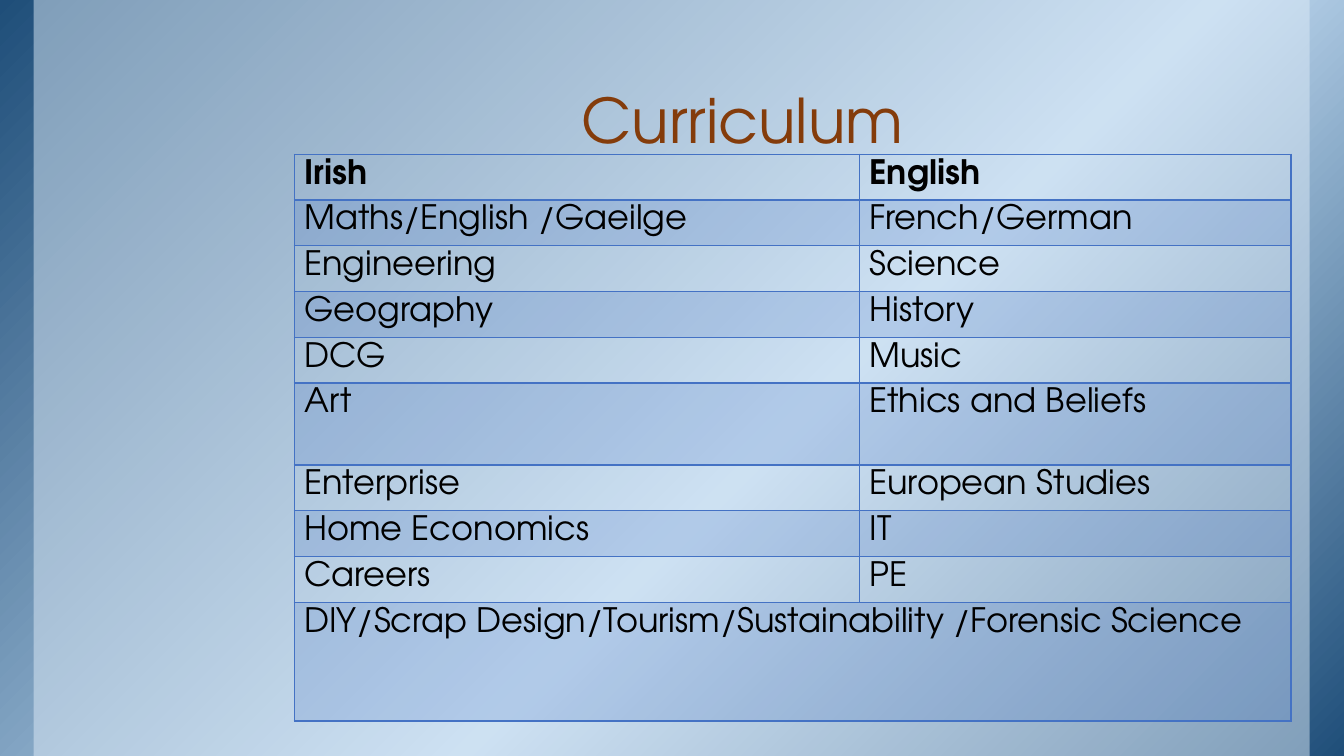
from lxml import etree
from pptx import Presentation
from pptx.dml.color import RGBColor
from pptx.enum.shapes import MSO_SHAPE
from pptx.enum.text import MSO_ANCHOR, PP_ALIGN
from pptx.oxml import parse_xml
from pptx.oxml.ns import nsdecls, qn
from pptx.util import Pt

RECT = MSO_SHAPE.RECTANGLE
CENTER, LEFT = PP_ALIGN.CENTER, PP_ALIGN.LEFT
TOP, BOTTOM = MSO_ANCHOR.TOP, MSO_ANCHOR.BOTTOM

TITLE = "Curriculum"
SUBJECTS = [
    ("Irish", "English"),
    ("Maths/English /Gaeilge", "French/German"),
    ("Engineering", "Science"),
    ("Geography", "History"),
    ("DCG", "Music"),
    ("Art", "Ethics and Beliefs"),
    ("Enterprise", "European Studies"),
    ("Home Economics", "IT"),
    ("Careers", "PE"),
    ("DIY/Scrap Design/Tourism/Sustainability /Forensic Science", ""),
]
COLORS = {
    "navy": "1F4E79", "sky": "BDD7EE", "veil": "DEEBF7",
    "title": "843C0B", "text": "000000", "accent": "4472C4",
}
BACKDROP_STOPS = [(0, "navy"), (58, "sky"), (100, "navy")]
FONT = "TeX Gyre Adventor"
SLIDE_W, SLIDE_H = 960, 540
COLUMN_WIDTHS = [403.7, 308.3]
ROW_HEIGHT = 32.7
TALL_ROWS = {5: 58.7, 9: 84.7}
TABLE_LEFT, TABLE_TOP = 210.2, 110.1


def rgb(name):
    return RGBColor.from_string(COLORS[name])


def set_alpha(fill, percent):
    """Make a solid fill partly transparent."""
    color = fill._xPr.find(qn("a:solidFill"))[0]
    etree.SubElement(color, qn("a:alpha"), val=str(percent * 1000))


def set_text(tf, text, size=24, color="text", bold=False, align=LEFT, spacing=1.0):
    p = tf.paragraphs[0]
    p.alignment = align
    p.line_spacing = spacing
    r = p.add_run()
    r.text = text
    r.font.name = FONT
    r.font.size = Pt(size)
    r.font.bold = bold
    r.font.color.rgb = rgb(color)


def add_panel(slide, left, width):
    """Add a full-height rectangle without outline or shadow."""
    sp = slide.shapes.add_shape(RECT, Pt(left), 0, Pt(width), Pt(SLIDE_H))
    sp.shadow.inherit = False
    sp.line.fill.background()
    return sp


def set_gradient(sp, stops, angle):
    gs = "".join(
        f'<a:gs pos="{pos * 1000}"><a:srgbClr val="{COLORS[name]}"/></a:gs>'
        for pos, name in stops)
    grad = parse_xml(
        f'<a:gradFill {nsdecls("a")} rotWithShape="1"><a:gsLst>{gs}</a:gsLst>'
        f'<a:lin ang="{angle * 60000}" scaled="0"/></a:gradFill>')
    sp.element.spPr.find(qn("a:prstGeom")).addnext(grad)


def set_borders(cell, header):
    for side in "LRTB":
        width = 2 if header and side == "B" else 1
        cell._tc.get_or_add_tcPr().append(parse_xml(
            f'<a:ln{side} {nsdecls("a")} w="{Pt(width)}"><a:solidFill>'
            f'<a:srgbClr val="{COLORS["accent"]}"/></a:solidFill></a:ln{side}>'))


def add_backdrop(slide):
    set_gradient(add_panel(slide, 0, SLIDE_W), BACKDROP_STOPS, 45)
    veil = add_panel(slide, 24, 911.5)
    veil.fill.solid()
    veil.fill.fore_color.rgb = rgb("veil")
    set_alpha(veil.fill, 50)


def add_title(slide):
    title = slide.shapes.title
    title.element.getparent().append(title.element)
    title.left, title.top, title.width, title.height = Pt(88), Pt(6), Pt(800), Pt(110)
    tf = title.text_frame
    tf.word_wrap = True
    tf.vertical_anchor = BOTTOM
    tf.margin_left, tf.margin_right = Pt(94.4), Pt(9.4)
    tf.margin_top, tf.margin_bottom = Pt(5), Pt(4.3)
    set_text(tf, TITLE, size=44, color="title", align=CENTER, spacing=0.85)


def add_subject_table(slide):
    heights = [TALL_ROWS.get(i, ROW_HEIGHT) for i in range(len(SUBJECTS))]
    table = slide.shapes.add_table(
        len(SUBJECTS), len(COLUMN_WIDTHS), Pt(TABLE_LEFT), Pt(TABLE_TOP),
        Pt(sum(COLUMN_WIDTHS)), Pt(sum(heights))).table
    table.first_row = table.horz_banding = False
    for column, width in zip(table.columns, COLUMN_WIDTHS):
        column.width = Pt(width)
    for i, (row, subjects) in enumerate(zip(table.rows, SUBJECTS)):
        row.height = Pt(heights[i])
        for cell, subject in zip(row.cells, subjects):
            cell.margin_left = cell.margin_right = Pt(7.2)
            cell.margin_top, cell.margin_bottom = Pt(3.6), 0
            cell.vertical_anchor = TOP
            set_borders(cell, header=i == 0)
            if i % 2:
                cell.fill.solid()
                cell.fill.fore_color.rgb = rgb("accent")
                set_alpha(cell.fill, 20)
            else:
                cell.fill.background()
            if subject:
                set_text(cell.text_frame, subject, bold=i == 0)
    last = len(SUBJECTS) - 1
    table.cell(last, 0).merge(table.cell(last, 1))


def main():
    prs = Presentation()
    prs.slide_width, prs.slide_height = Pt(SLIDE_W), Pt(SLIDE_H)
    slide = prs.slides.add_slide(prs.slide_layouts[5])
    add_backdrop(slide)
    add_title(slide)
    add_subject_table(slide)
    prs.save("out.pptx")


if __name__ == "__main__":
    main()
